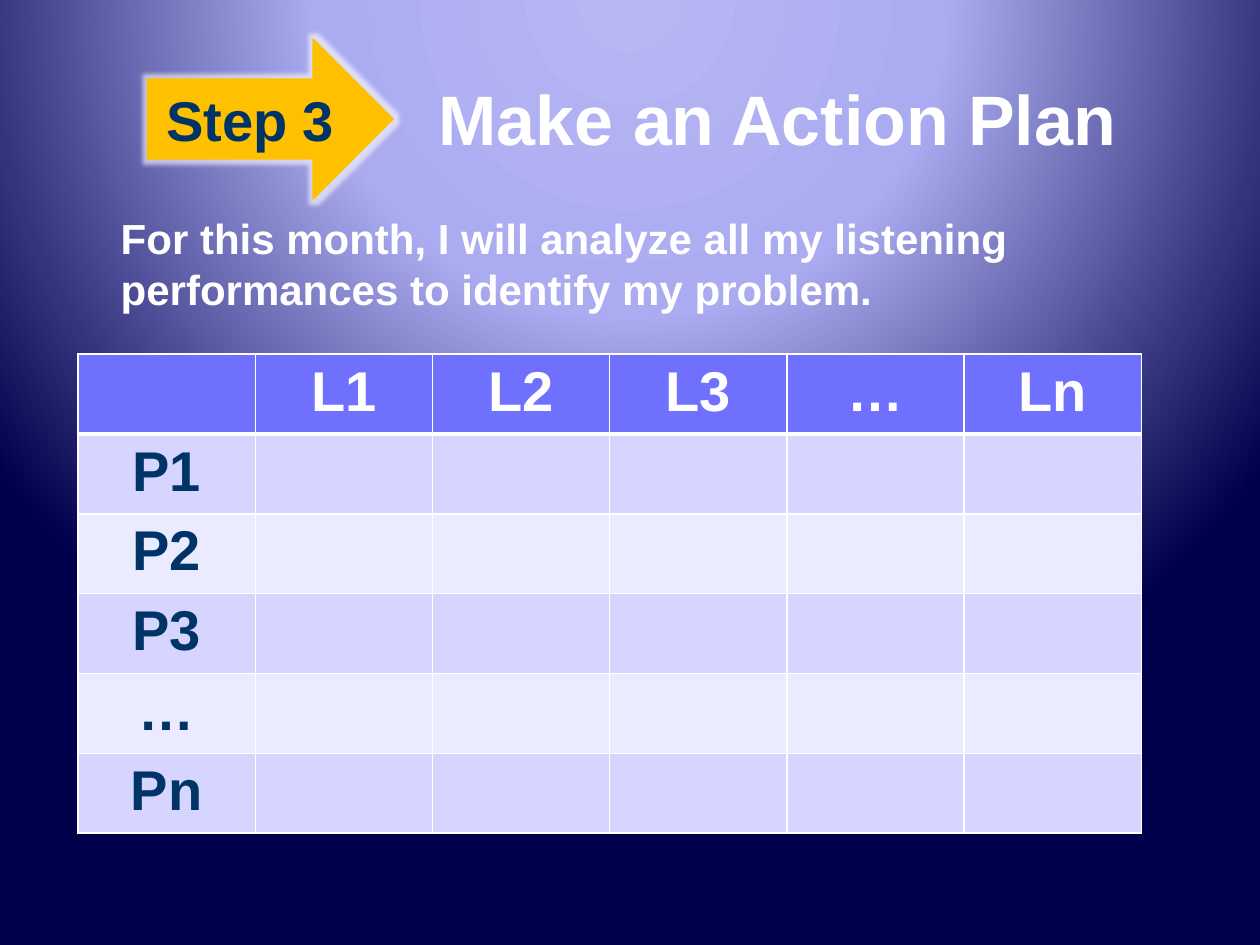
from lxml import etree
from pptx import Presentation
from pptx import util as u
from pptx.dml.color import RGBColor
from pptx.enum import shapes, text
from pptx.oxml import parse_xml
from pptx.oxml.ns import nsdecls, qn

WHITE, NAVY, GOLD = "FFFFFF", "003366", "FFC000"
HEADER, BANDS = "7070FF", ("D5D5FF", "EBEBFF")


def colour(value):
    return RGBColor.from_string(value)


class PlanSlide:
    font = "Arial"

    def __init__(self, deck):
        self.slide = deck.slides.add_slide(deck.slide_layouts[6])

    def background(self, stops):
        stop_xml = "".join(
            f'<a:gs pos="{percent * 1000}"><a:srgbClr val="{tint}"/></a:gs>'
            for percent, tint in stops
        )
        self.slide._element.cSld.insert(0, parse_xml(
            f'<p:bg {nsdecls("p", "a")}><p:bgPr><a:gradFill rotWithShape="1">'
            f'<a:gsLst>{stop_xml}</a:gsLst><a:path path="circle">'
            '<a:fillToRect l="50000" t="-80000" r="50000" b="180000"/></a:path>'
            '</a:gradFill><a:effectLst/></p:bgPr></p:bg>'
        ))

    def add_words(self, frame, words, size, tint, align=text.PP_ALIGN.CENTER):
        paragraph = frame.paragraphs[0]
        paragraph.alignment = align
        run = paragraph.add_run()
        run.text = words
        run.font.name = self.font
        run.font.size = u.Pt(size)
        run.font.bold = True
        run.font.color.rgb = colour(tint)

    def textbox(self, place, words, size, align):
        box = self.slide.shapes.add_textbox(*map(u.Inches, place))
        box.text_frame.word_wrap = True
        self.add_words(box.text_frame, words, size, WHITE, align)

    def arrow(self, place, words):
        step = self.slide.shapes.add_shape(
            shapes.MSO_SHAPE.RIGHT_ARROW, *map(u.Inches, place))
        step.shadow.inherit = False
        step.fill.solid()
        step.fill.fore_color.rgb = colour(GOLD)
        step.line.color.rgb = colour(GOLD)
        step.line.width = u.Pt(0.75)
        effects = step._element.spPr.find(qn("a:effectLst"))
        effects.append(parse_xml(
            f'<a:glow {nsdecls("a")} rad="{u.Pt(5)}"><a:srgbClr val="{WHITE}">'
            '<a:alpha val="60000"/></a:srgbClr></a:glow>'))
        frame = step.text_frame
        frame.word_wrap = False
        frame.vertical_anchor = text.MSO_ANCHOR.MIDDLE
        self.add_words(frame, words, 32, NAVY)

    def border(self, cell, widths):
        properties = cell._tc.get_or_add_tcPr()
        for index, (side, width) in enumerate(widths.items()):
            edge = etree.Element(qn(f"a:{side}"), w=str(u.Pt(width)))
            fill = etree.SubElement(edge, qn("a:solidFill"))
            etree.SubElement(fill, qn("a:srgbClr"), val=WHITE)
            properties.insert(index, edge)

    def table(self, place, rows):
        grid = self.slide.shapes.add_table(
            len(rows), len(rows[0]), *map(u.Inches, place)).table
        for r, row in enumerate(rows):
            for c, words in enumerate(row):
                cell = grid.cell(r, c)
                cell.fill.solid()
                cell.fill.fore_color.rgb = colour(
                    BANDS[(r - 1) % 2] if r else HEADER)
                self.border(cell, {"lnL": 1, "lnR": 1,
                                   "lnT": 3 if r == 1 else 1,
                                   "lnB": 1 if r else 3})
                if words:
                    self.add_words(cell.text_frame, words, 32,
                                   NAVY if r else WHITE)


def main():
    deck = Presentation()
    deck.slide_width, deck.slide_height = u.Inches(10), u.Inches(7.5)
    plan = PlanSlide(deck)
    plan.background([(0, "B7B7F3"), (40, "ABABF1"), (100, "00004C")])
    plan.textbox((3.2, 0.55, 5.94, 0.83), "Make an Action Plan", 40,
                 text.PP_ALIGN.CENTER)
    plan.textbox((0.86, 1.64, 8.08, 0.91),
                 "For this month, I will analyze all my listening "
                 "performances to identify my problem.", 24,
                 text.PP_ALIGN.LEFT)
    plan.arrow((1.17, 0.31, 1.95, 1.27), "Step 3")
    header = ["", "L1", "L2", "L3", "…", "Ln"]
    problems = ["P1", "P2", "P3", "…", "Pn"]
    blanks = [""] * (len(header) - 1)
    plan.table((0.62, 2.81, 8.44, 3.44),
               [header] + [[problem] + blanks for problem in problems])
    deck.save("out.pptx")


if __name__ == "__main__":
    main()
